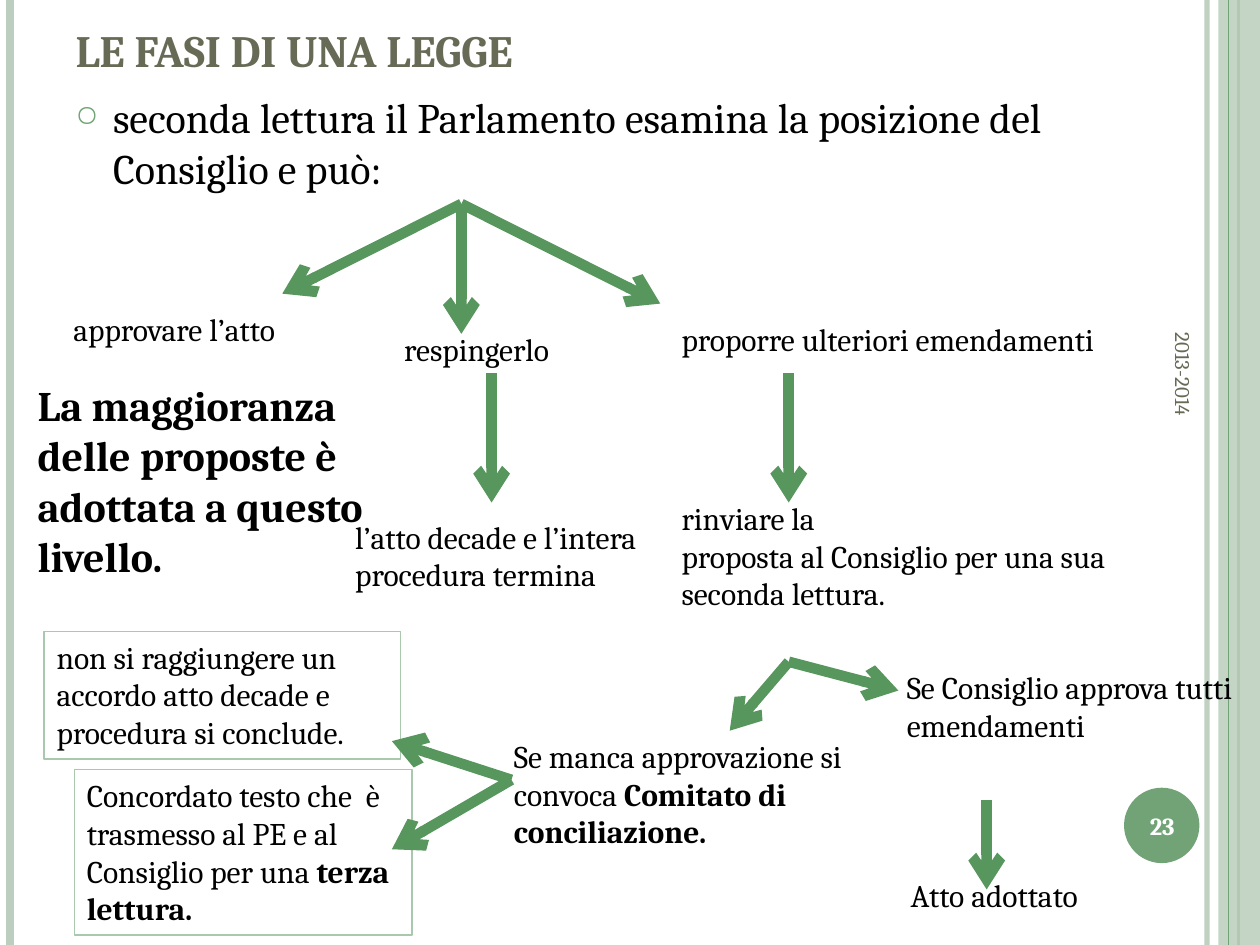
from lxml import etree
from pptx import Presentation
from pptx.dml.color import RGBColor
from pptx.enum import shapes, text
from pptx.oxml import ns
from pptx.util import Cm, Pt

THEME = {
    "font": "Cambria", "ink": "000000", "white": "FFFFFF", "grey": "676A55",
    "pale": "BCCEBD", "green": "72A376", "arrow": "57965C", "border": "AAC8AD",
    "title": 32, "large": 24, "normal": 18, "number": 14, "date": 12,
    "arrow_width": 6, "border_width": 0.75,
}

HEIGHT = 19.05
TITLE = ("le fasi di una legge", (1.27, -1.47, 20.75, 3.18))
INTRO = ("seconda lettura il Parlamento esamina la posizione del Consiglio e può:",
         (1.27, 1.73, 20.75, 2.39))

# Each paragraph is a list of runs; a run in a tuple is bold.
STEPS = [
    ([["approvare l’atto"]], (1.23, 6.12, 6, 1.02), {}),
    ([["respingerlo"]], (7.9, 6.53, 6.2, 4.11), {}),
    ([["proporre ulteriori emendamenti"]], (13.49, 6.32, 10.39, 3.33), {}),
    ([[("La maggioranza delle proposte è adottata a questo livello.",)]],
     (0.51, 7.52, 7.11, 4.37), {"size": "large"}),
    ([["l’atto decade e l’intera procedura termina"]], (6.91, 10.31, 6.2, 2.57), {}),
    ([["rinviare la"], ["proposta al Consiglio per una sua seconda lettura."]],
     (13.49, 9.93, 9.09, 2.57), {}),
    ([["Se manca approvazione si convoca ", ("Comitato di conciliazione.",)]],
     (10.11, 14.73, 8.2, 2.57), {}),
    ([["Se Consiglio approva tutti emendamenti"]], (18.03, 13.34, 7.67, 1.8), {}),
    ([["Atto adottato"]], (18.11, 17.53, 4.14, 1.02), {"wrap": False}),
    ([["non si raggiungere un accordo atto decade e procedura si conclude."]],
     (0.89, 12.73, 7.19, 2.57), {"border": True}),
    ([["Concordato testo che  è trasmesso al PE e al Consiglio per una ",
       ("terza lettura.",)]], (1.5, 15.52, 6.81, 3.33), {"border": True}),
]

# Each start point with the points its arrows lead to.
ARROWS = [
    ((9.3, 4.11), [(5.69, 5.92), (9.3, 6.73), (13.31, 6.12)]),
    ((9.91, 7.52), [(9.91, 10.13)]),
    ((15.9, 7.52), [(15.9, 10.13)]),
    ((15.9, 13.34), [(18.11, 13.92), (14.71, 14.73)]),
    ((19.89, 16.13), [(19.89, 17.93)]),
    ((10.31, 15.72), [(7.9, 14.94), (7.9, 17.12)]),
]

# Vertical stripes: x, colour, width in points, opacity in percent.
STRIPES_BELOW = [(24.33, "pale", 3, 93), (0.2, "pale", 4.5, 100), (24.97, "green", 1.5, 100)]
STRIPES_ABOVE = [(24.77, "green", 0.75, 100)]
BAND = (24.56, 0, 0.84, HEIGHT)
DISC = (22.66, 15.88, 1.52, 1.52)
NUMBER = ("23", (22.58, 15.93, 1.7, 1.45))
DATE = ("2013-2014", (19.41, 10.39, 8.89, 1.02))


def colour(name):
    return RGBColor.from_string(THEME[name])


def sub(parent, tag, **attributes):
    return etree.SubElement(parent, ns.qn(tag), attributes)


def set_opacity(fill_owner, percent):
    for element in fill_owner.iter(ns.qn("a:srgbClr")):
        sub(element, "a:alpha", val=str(percent * 1000))


def write(frame, paragraphs, size="normal", ink="ink", bold=False, wrap=True, grow=False,
          align=text.PP_ALIGN.LEFT, anchor=text.MSO_ANCHOR.TOP):
    frame.word_wrap = wrap
    frame.auto_size = text.MSO_AUTO_SIZE.SHAPE_TO_FIT_TEXT if grow else text.MSO_AUTO_SIZE.NONE
    frame.vertical_anchor = anchor
    for index, runs in enumerate(paragraphs):
        paragraph = frame.add_paragraph() if index else frame.paragraphs[0]
        paragraph.alignment = align
        for part in runs:
            emphasised = isinstance(part, tuple)
            run = paragraph.add_run()
            run.text = part[0] if emphasised else part
            run.font.name = THEME["font"]
            run.font.size = Pt(THEME[size])
            run.font.bold = bold or emphasised
            run.font.color.rgb = colour(ink)
    return frame


def add_text(slide, paragraphs, box, border=False, **style):
    shape = slide.shapes.add_textbox(*map(Cm, box))
    write(shape.text_frame, paragraphs, **style)
    if border:
        shape.line.color.rgb = colour("border")
        shape.line.width = Pt(THEME["border_width"])
    return shape


def add_line(slide, start, end, ink, width, arrow=False, opacity=100):
    line = slide.shapes.add_connector(
        shapes.MSO_CONNECTOR.STRAIGHT, *map(Cm, (*start, *end)))
    line.line.color.rgb = colour(ink)
    line.line.width = Pt(width)
    properties = line.line._get_or_add_ln()
    if opacity < 100:
        set_opacity(properties, opacity)
    if arrow:
        sub(properties, "a:tailEnd", type="arrow")
    sub(line._element.spPr, "a:effectLst")


def add_plain_shape(slide, kind, box, ink, opacity=100):
    shape = slide.shapes.add_shape(kind, *map(Cm, box))
    shape.shadow.inherit = False
    shape.fill.solid()
    shape.fill.fore_color.rgb = colour(ink)
    shape.line.fill.background()
    if opacity < 100:
        set_opacity(shape._element.spPr, opacity)


def add_stripes(slide, stripes):
    for x, ink, width, opacity in stripes:
        add_line(slide, (x, 0), (x, HEIGHT), ink, width, opacity=opacity)


def add_decoration(slide):
    add_stripes(slide, STRIPES_BELOW)
    add_plain_shape(slide, shapes.MSO_SHAPE.RECTANGLE, BAND, "pale", 87)
    add_stripes(slide, STRIPES_ABOVE)
    add_plain_shape(slide, shapes.MSO_SHAPE.OVAL, DISC, "green")


def add_title(slide):
    title = slide.shapes.title
    words, box = TITLE
    title.left, title.top, title.width, title.height = map(Cm, box)
    frame = write(title.text_frame, [[words]], size="title", ink="grey", bold=True,
                  anchor=text.MSO_ANCHOR.BOTTOM)
    frame.paragraphs[0].runs[0].font._element.set("cap", "small")


def add_intro(slide):
    words, box = INTRO
    paragraph = add_text(slide, [[words]], box, size="large").text_frame.paragraphs[0]
    paragraph.space_before = Pt(6)
    properties = paragraph._p.get_or_add_pPr()
    indent = Cm(0.76)
    properties.set("marL", str(indent))
    properties.set("indent", str(-indent))
    sub(sub(properties, "a:buClr"), "a:srgbClr", val=THEME["green"])
    sub(properties, "a:buSzPct", val="70000")
    sub(properties, "a:buChar", char="○")


def main():
    presentation = Presentation()
    presentation.slide_width, presentation.slide_height = Cm(25.4), Cm(HEIGHT)
    slide = presentation.slides.add_slide(presentation.slide_layouts[5])
    add_decoration(slide)
    add_title(slide)
    add_intro(slide)
    for paragraphs, box, style in STEPS:
        add_text(slide, paragraphs, box, grow=True, **style)
    for start, ends in ARROWS:
        for end in ends:
            add_line(slide, start, end, "arrow", THEME["arrow_width"], arrow=True)
    number, box = NUMBER
    add_text(slide, [[number]], box, size="number", ink="white", bold=True,
             align=text.PP_ALIGN.CENTER, anchor=text.MSO_ANCHOR.MIDDLE)
    date, box = DATE
    add_text(slide, [[date]], box, size="date", ink="grey",
             anchor=text.MSO_ANCHOR.MIDDLE).rotation = 90
    presentation.save("out.pptx")


if __name__ == "__main__":
    main()
